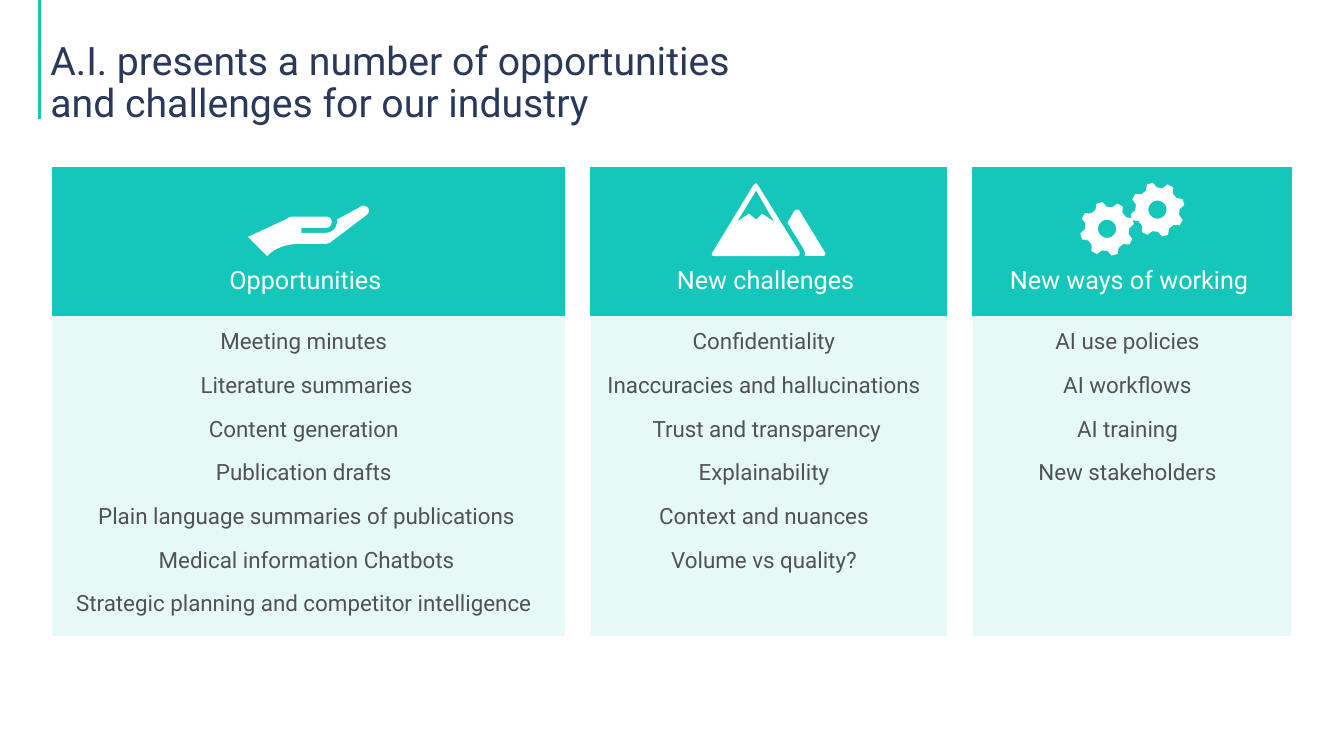
from math import cos, radians, sin

from lxml import etree
from pptx import Presentation
from pptx.dml.color import RGBColor
from pptx.enum.shapes import MSO_CONNECTOR, MSO_SHAPE
from pptx.enum.text import MSO_ANCHOR, PP_ALIGN
from pptx.oxml.ns import qn
from pptx.util import Inches, Pt

TEAL = RGBColor(0x15, 0xC6, 0xBA)
NAVY = RGBColor(0x2A, 0x39, 0x5A)
GREY = RGBColor(0x50, 0x52, 0x58)
WHITE = RGBColor(0xFF, 0xFF, 0xFF)

RECT = MSO_SHAPE.RECTANGLE
STRAIGHT = MSO_CONNECTOR.STRAIGHT
TOP, BOTTOM = MSO_ANCHOR.TOP, MSO_ANCHOR.BOTTOM
LEFT, CENTER = PP_ALIGN.LEFT, PP_ALIGN.CENTER

# Column layout
START, GAP = 0.52, 0.26
HEAD_TOP, HEAD_H = 1.66, 1.47
BODY_TOP, BODY_H = 3.13, 3.18
COLUMNS = [
    (5.08, "Opportunities ", [
        "Meeting minutes ", "Literature summaries", "Content generation ",
        "Publication drafts ", "Plain language summaries of publications",
        "Medical information Chatbots",
        "Strategic planning and competitor intelligence "]),
    (3.53, "New challenges ", [
        "Confidentiality ", "Inaccuracies and hallucinations ",
        "Trust and transparency", "Explainability ", "Context and nuances ",
        "Volume vs quality? "]),
    (3.16, "New ways of working ", [
        "AI use policies ", "AI workflows ", "AI training ",
        "New stakeholders "]),
]

# Icon outlines: a pair is a line end, six numbers are a cubic curve
HAND = [
    (3.66, 2.09), (3.66, 2.06, 3.63, 2.04, 3.6, 2.04),
    (3.59, 2.04, 3.58, 2.04, 3.58, 2.05), (3.34, 2.18),
    (3.35, 2.19, 3.35, 2.21, 3.34, 2.22),
    (3.33, 2.28, 3.28, 2.31, 3.23, 2.31), (2.99, 2.31), (2.99, 2.26),
    (3.24, 2.26), (3.27, 2.26, 3.29, 2.23, 3.29, 2.2),
    (3.29, 2.17, 3.27, 2.15, 3.24, 2.15), (2.91, 2.15),
    (2.89, 2.15, 2.87, 2.15, 2.85, 2.17), (2.46, 2.35), (2.65, 2.54),
    (2.74, 2.45, 2.85, 2.42, 2.98, 2.42), (3.23, 2.42),
    (3.24, 2.42, 3.26, 2.41, 3.27, 2.41), (3.64, 2.13),
    (3.65, 2.12, 3.66, 2.11, 3.66, 2.09)]
PEAK = [
    (7.93, 2.5), (7.52, 1.84), (7.51, 1.83, 7.51, 1.82, 7.5, 1.82),
    (7.49, 1.82, 7.48, 1.83, 7.47, 1.84), (7.07, 2.5),
    (7.06, 2.51, 7.06, 2.52, 7.06, 2.53),
    (7.07, 2.54, 7.08, 2.54, 7.09, 2.54), (7.9, 2.54),
    (7.91, 2.54, 7.92, 2.54, 7.93, 2.53),
    (7.93, 2.52, 7.93, 2.51, 7.93, 2.5)]
SNOW = [(7.56, 2.12), (7.5, 2.18), (7.43, 2.12), (7.31, 2.2),
        (7.5, 1.89), (7.68, 2.2)]
SLOPE = [
    (8.18, 2.5), (7.93, 2.09), (7.92, 2.08, 7.91, 2.08, 7.91, 2.08),
    (7.9, 2.08, 7.89, 2.08, 7.88, 2.09), (7.81, 2.21), (7.97, 2.47),
    (7.98, 2.49, 7.99, 2.52, 7.98, 2.54), (8.16, 2.54),
    (8.17, 2.54, 8.18, 2.54, 8.18, 2.53),
    (8.19, 2.52, 8.19, 2.51, 8.18, 2.5)]


def flatten(outline, steps=8):
    """Turn lines and curves into a list of EMU points."""
    dots = [outline[0]]
    for part in outline[1:]:
        if len(part) == 2:
            dots.append(part)
            continue
        pts = [dots[-1], part[:2], part[2:4], part[4:]]
        for i in range(1, steps + 1):
            t = i / steps
            mix = ((1 - t) ** 3, 3 * t * (1 - t) ** 2,
                   3 * t * t * (1 - t), t ** 3)
            dots.append(tuple(sum(m * p[k] for m, p in zip(mix, pts))
                              for k in (0, 1)))
    return [(Inches(x), Inches(y)) for x, y in dots]


class Deck:
    font = "Roboto"

    def __init__(self):
        self.prs = Presentation()
        self.prs.slide_width = Inches(13.33)
        self.prs.slide_height = Inches(7.5)
        self.slide = self.prs.slides.add_slide(self.prs.slide_layouts[6])
        self.shapes = self.slide.shapes

    def line(self, x1, y1, x2, y2, color, width):
        rule = self.shapes.add_connector(
            STRAIGHT, Inches(x1), Inches(y1), Inches(x2), Inches(y2))
        rule.line.color.rgb = color
        rule.line.width = Pt(width)
        etree.SubElement(rule.element.spPr, qn("a:effectLst"))

    def label(self, shape, paras, size, color, inset, anchor=TOP,
              align=CENTER, space=None, after=0):
        frame = shape.text_frame
        frame.word_wrap = True
        frame.vertical_anchor = anchor
        (frame.margin_left, frame.margin_top, frame.margin_right,
         frame.margin_bottom) = [Inches(v) for v in inset]
        for i, text in enumerate(paras):
            para = frame.add_paragraph() if i else frame.paragraphs[0]
            para.alignment = align
            para.line_spacing = space
            para.space_after = Pt(after)
            for j, row in enumerate(text.split("\n")):
                if j:
                    para.add_line_break()
                run = para.add_run()
                run.text = row
                run.font.name = self.font
                run.font.size = Pt(size)
                run.font.color.rgb = color

    def text(self, x, y, w, h, paras, size, color, **style):
        box = self.shapes.add_textbox(
            Inches(x), Inches(y), Inches(w), Inches(h))
        self.label(box, paras, size, color, (0, 0, 0, 0), **style)

    def paint(self, shape, color):
        shape.shadow.inherit = False
        shape.fill.solid()
        shape.fill.fore_color.rgb = color
        shape.line.fill.background()

    def box(self, x, y, w, h, alpha=None):
        rect = self.shapes.add_shape(
            RECT, Inches(x), Inches(y), Inches(w), Inches(h))
        self.paint(rect, TEAL)
        if alpha:
            tint = rect.element.spPr.find(".//" + qn("a:srgbClr"))
            etree.SubElement(tint, qn("a:alpha"), val=str(alpha * 1000))
        else:
            rect.line.color.rgb = TEAL
            rect.line.width = Pt(1)
        return rect

    def icon(self, *outlines, turn=0):
        paths = [flatten(o) for o in outlines]
        pen = self.shapes.build_freeform(*paths[0][0])
        pen.add_line_segments(paths[0][1:])
        for dots in paths[1:]:
            pen.move_to(*dots[0])
            pen.add_line_segments(dots[1:])
        shape = pen.convert_to_shape()
        self.paint(shape, WHITE)
        shape.rotation = turn

    def gear(self, x, y, teeth=8):
        def spot(r, deg):
            return x + r * cos(radians(deg)), y + r * sin(radians(deg))
        tooth = ((0.22, -15), (0.27, -6.5), (0.27, 6.5), (0.22, 15))
        rim = [spot(r, 360 * n / teeth - 8 + a)
               for n in range(teeth) for r, a in tooth]
        hole = [spot(0.09, a) for a in range(360, 0, -10)]
        self.icon(rim, hole, turn=36.6)


def main():
    deck = Deck()

    # Title with accent line
    deck.line(0.39, 0, 0.39, 1.18, TEAL, 2.25)
    deck.text(0.5, 0.4, 12.11, 0.85,
              ["A.I. presents a number of opportunities \n"
               "and challenges for our industry"],
              28, NAVY, anchor=BOTTOM, align=LEFT, space=0.9)

    # Columns
    x = START
    for width, head, items in COLUMNS:
        top = deck.box(x, HEAD_TOP, width, HEAD_H)
        deck.label(top, [head], 18, WHITE, (0.16, 0.09, 0.16, 0.2),
                   anchor=BOTTOM, space=0.9)
        body = deck.box(x, BODY_TOP, width, BODY_H, alpha=10)
        deck.label(body, items, 16, GREY, (0.12, 0.12, 0.16, 0.18), after=12)
        x += width + GAP

    # Icons
    deck.gear(11.48, 2.08)
    deck.gear(10.98, 2.27)
    deck.icon(SLOPE)
    deck.icon(PEAK, SNOW)
    deck.icon(HAND)

    deck.prs.save("out.pptx")


if __name__ == "__main__":
    main()
